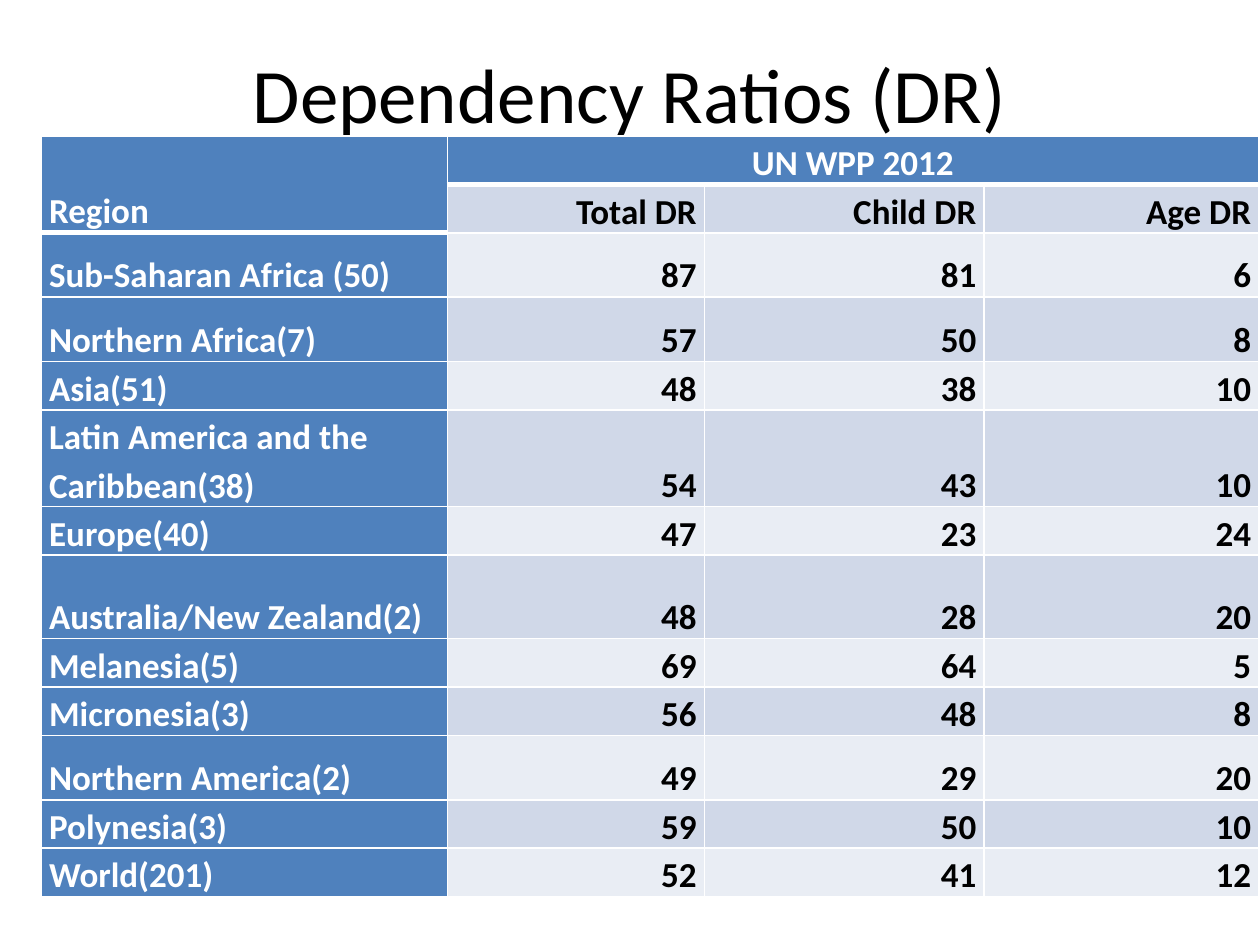
"""Build a slide with a table of dependency ratios by world region."""
from lxml.etree import SubElement
from pptx import Presentation
from pptx.dml.color import RGBColor
from pptx.enum.text import MSO_ANCHOR, PP_ALIGN
from pptx.oxml import parse_xml
from pptx.oxml.ns import nsdecls, qn
from pptx.util import Inches, Pt

WHITE = RGBColor(0xFF, 0xFF, 0xFF)
BLACK = RGBColor(0x00, 0x00, 0x00)
BLUE = RGBColor(0x4F, 0x81, 0xBD)
BANDS = [RGBColor(0xE9, 0xED, 0xF4), RGBColor(0xD0, 0xD8, 0xE8)]

ROWS = [
    (2, "Region", "UN WPP 2012", "", ""),
    (2, "", "Total DR", "Child DR", "Age DR"),
    (3, "Sub-Saharan Africa (50)", "87", "81", "6"),
    (3, "Northern Africa(7)", "57", "50", "8"),
    (2, "Asia(51)", "48", "38", "10"),
    (4, "Latin America and the Caribbean(38)", "54", "43", "10"),
    (2, "Europe(40)", "47", "23", "24"),
    (3.9, "Australia/New Zealand(2)", "48", "28", "20"),
    (2, "Melanesia(5)", "69", "64", "5"),
    (2, "Micronesia(3)", "56", "48", "8"),
    (3, "Northern America(2)", "49", "29", "20"),
    (2, "Polynesia(3)", "59", "50", "10"),
    (2, "World(201)", "52", "41", "12"),
]
COLS = [0.322, 0.204, 0.222, 0.218]


def write(tf, text, align, spacing, **fmt):
    p = tf.paragraphs[0]
    p.alignment, p.line_spacing = align, spacing
    r = p.add_run()
    r.text = text
    r.font.color.rgb = fmt.pop("color")
    for name, value in fmt.items():
        setattr(r.font, name, value)


def add_borders(cell, bottom):
    tcPr = cell._tc.get_or_add_tcPr()
    for i, side in enumerate("LRTB"):
        width = Pt(bottom if side == "B" else 1)
        ln = parse_xml(f'<a:ln{side} {nsdecls("a")} w="{width}"/>')
        fill = SubElement(ln, qn("a:solidFill"))
        SubElement(fill, qn("a:srgbClr"), val=str(WHITE))
        tcPr.insert(i, ln)


prs = Presentation()
prs.slide_width, prs.slide_height = Inches(10), Inches(7.5)
W, H = prs.slide_width, prs.slide_height
unit = H / 44
s = prs.slides.add_slide(prs.slide_layouts[6])

sp = s.shapes.add_textbox(int(W * 0.05), int(H * 0.04), int(W * 0.9), int(H * 0.116))
tf = sp.text_frame
tf.word_wrap = True
tf.vertical_anchor = MSO_ANCHOR.MIDDLE
write(tf, "Dependency Ratios (DR)", PP_ALIGN.CENTER, 1.0,
      size=Pt(44), name="Calibri", color=BLACK)

height = int(unit * sum(row[0] for row in ROWS))
table = s.shapes.add_table(len(ROWS), len(COLS), int(W * 0.033), int(H * 0.144),
                           int(W * sum(COLS)), height).table
table.first_row = table.horz_banding = False
for col, share in zip(table.columns, COLS):
    col.width = int(W * share)

for i, (units, *texts) in enumerate(ROWS):
    table.rows[i].height = int(unit * units)
    for j, text in enumerate(texts):
        cell = table.cell(i, j)
        header = i == 0 or j == 0
        cell.fill.solid()
        cell.fill.fore_color.rgb = BLUE if header else BANDS[i % 2]
        add_borders(cell, 3 if i == 0 or (i, j) == (1, 0) else 1)
        cell.vertical_anchor = MSO_ANCHOR.BOTTOM
        cell.margin_left = cell.margin_right = int(W * 0.006)
        cell.margin_top = cell.margin_bottom = 0
        if text:
            align = PP_ALIGN.LEFT if j == 0 else PP_ALIGN.CENTER if i == 0 else PP_ALIGN.RIGHT
            write(cell.text_frame, text, align, 1.15, size=Pt(20), name="Calibri",
                  bold=True, color=WHITE if header else BLACK)

table.cell(0, 0).merge(table.cell(1, 0))
table.cell(0, 1).merge(table.cell(0, 3))

prs.save("out.pptx")
